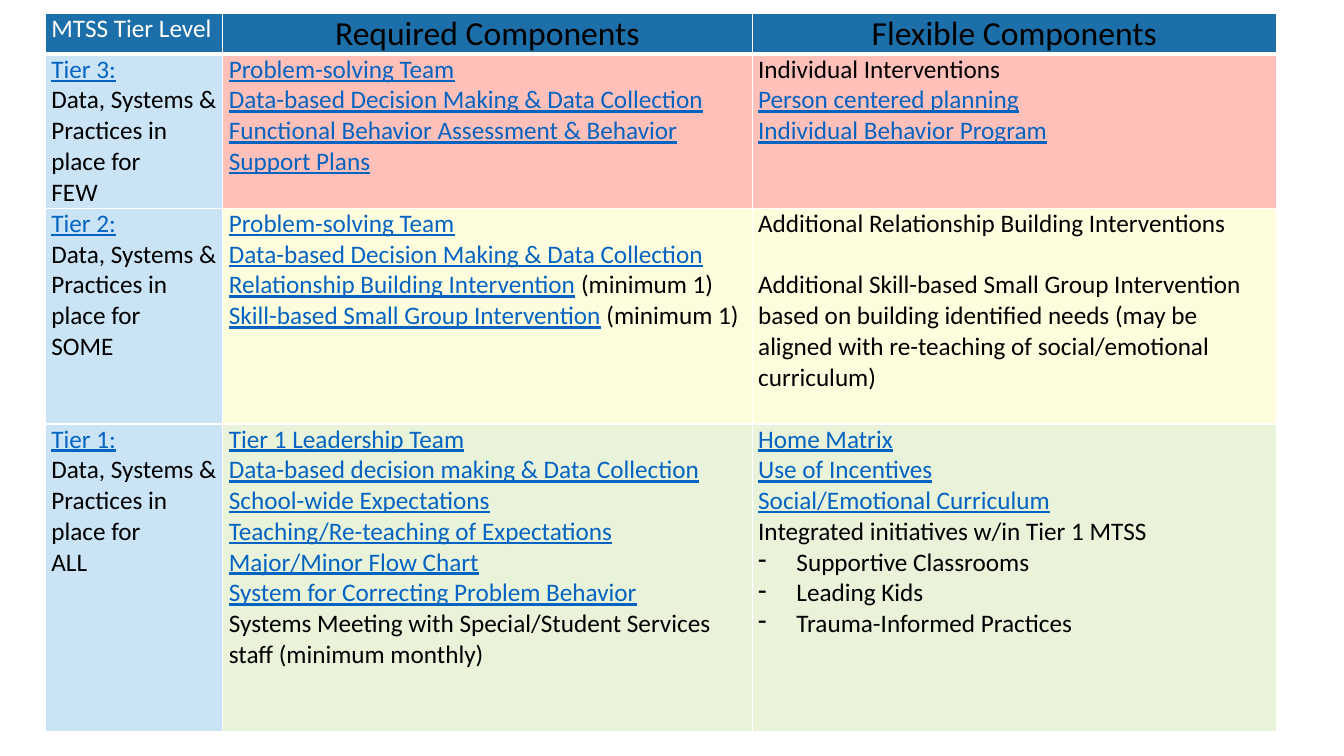
from dataclasses import dataclass

from lxml.etree import SubElement
from pptx import Presentation
from pptx.dml.color import RGBColor as Rgb
from pptx.enum.text import MSO_ANCHOR as Anchor, PP_ALIGN as Align
from pptx.oxml.ns import qn
from pptx.util import Pt


@dataclass(frozen=True)
class Theme:
    """Colours, font and type sizes of the slide."""
    font: str = "Calibri"
    body_size: int = 18
    heading_size: int = 24
    gap: int = 22
    ink: str = "000000"
    link: str = "0563C1"
    white: str = "FFFFFF"
    header: str = "1D6FA9"
    level: str = "CAE4F6"
    few: str = "FFC0B9"
    some: str = "FDFDDE"
    all: str = "E8F3DA"


@dataclass(frozen=True)
class Line:
    """One paragraph: linked words, then plain words."""
    link: str = ""
    plain: str = ""
    dash: bool = False
    gap_before: bool = False


@dataclass(frozen=True)
class Tier:
    """One table row with its level, audience and components."""
    level: str
    audience: str
    fill: str
    height: int
    required: tuple
    flexible: tuple


THEME = Theme()
PX = 9144
SLIDE_SIZE = (1333, 750)
TABLE_BOX = (45, 13, 1221, 712)
COLUMN_WIDTHS = (176, 525, 520)
HEADER_HEIGHT = 40
CELL_INSET = 6
DASH_INDENT = 38

HEADINGS = (
    ("MTSS Tier Level", THEME.body_size, THEME.white, Align.LEFT),
    ("Required Components", THEME.heading_size, THEME.ink, Align.CENTER),
    ("Flexible Components", THEME.heading_size, THEME.ink, Align.CENTER),
)

TIERS = (
    Tier(
        "Tier 3:", "FEW", THEME.few, 153,
        (
            Line("Problem-solving Team"),
            Line("Data-based Decision Making & Data Collection"),
            Line("Functional Behavior Assessment & Behavior Support Plans"),
        ),
        (
            Line(plain="Individual Interventions"),
            Line("Person centered planning"),
            Line("Individual Behavior Program"),
        ),
    ),
    Tier(
        "Tier 2:", "SOME", THEME.some, 214,
        (
            Line("Problem-solving Team"),
            Line("Data-based Decision Making & Data Collection"),
            Line("Relationship Building Intervention", " (minimum 1)"),
            Line("Skill-based Small Group Intervention", " (minimum 1)"),
        ),
        (
            Line(plain="Additional Relationship Building Interventions"),
            Line(plain="Additional Skill-based Small Group Intervention based on "
                       "building identified needs (may be aligned with re-teaching "
                       "of social/emotional curriculum)", gap_before=True),
        ),
    ),
    Tier(
        "Tier 1:", "ALL", THEME.all, 305,
        (
            Line("Tier 1 Leadership Team"),
            Line("Data-based decision making & Data Collection"),
            Line("School-wide Expectations"),
            Line("Teaching/Re-teaching of Expectations"),
            Line("Major/Minor Flow Chart"),
            Line("System for Correcting Problem Behavior"),
            Line(plain="Systems Meeting with Special/Student Services staff "
                       "(minimum monthly)"),
        ),
        (
            Line("Home Matrix"),
            Line("Use of Incentives"),
            Line("Social/Emotional Curriculum"),
            Line(plain="Integrated initiatives w/in Tier 1 MTSS"),
            Line(plain="Supportive Classrooms", dash=True),
            Line(plain="Leading Kids", dash=True),
            Line(plain="Trauma-Informed Practices", dash=True),
        ),
    ),
)


def add_run(paragraph, words, size, color, underline=False):
    """Add one styled run to a paragraph."""
    run = paragraph.add_run()
    run.text = words
    font = run.font
    font.name, font.size, font.bold = THEME.font, Pt(size), False
    font.underline = underline
    font.color.rgb = Rgb.from_string(color)


def add_dash(paragraph):
    """Give a paragraph a hanging dash bullet."""
    properties = paragraph._p.get_or_add_pPr()
    properties.set("marL", str(DASH_INDENT * PX))
    properties.set("indent", str(-DASH_INDENT * PX))
    SubElement(properties, qn("a:buChar"), char="-")


def style_cell(cell, fill, bottom_width=1):
    """Set the insets, white borders and fill of a cell."""
    cell.margin_left = cell.margin_right = CELL_INSET * PX
    cell.margin_top = cell.margin_bottom = 0
    cell.vertical_anchor = Anchor.TOP
    properties = cell._tc.get_or_add_tcPr()
    for side, width in (("L", 1), ("R", 1), ("T", 1), ("B", bottom_width)):
        border = SubElement(properties, qn(f"a:ln{side}"), w=str(Pt(width)))
        paint = SubElement(border, qn("a:solidFill"))
        SubElement(paint, qn("a:srgbClr"), val=THEME.white)
    cell.fill.solid()
    cell.fill.fore_color.rgb = Rgb.from_string(fill)


def fill_header(cells):
    """Write the column headings."""
    for cell, (words, size, color, alignment) in zip(cells, HEADINGS):
        style_cell(cell, THEME.header, bottom_width=3)
        paragraph = cell.text_frame.paragraphs[0]
        paragraph.alignment = alignment
        add_run(paragraph, words, size, color)


def fill_component_cell(cell, fill, lines):
    """Write one body cell, a paragraph for each line."""
    style_cell(cell, fill)
    frame = cell.text_frame
    for index, line in enumerate(lines):
        paragraph = frame.add_paragraph() if index else frame.paragraphs[0]
        if line.gap_before:
            paragraph.space_before = Pt(THEME.gap)
        if line.dash:
            add_dash(paragraph)
        if line.link:
            add_run(paragraph, line.link, THEME.body_size, THEME.link, True)
        if line.plain:
            add_run(paragraph, line.plain, THEME.body_size, THEME.ink)


def fill_tier(cells, tier):
    """Write the three cells of one tier."""
    level = (
        Line(tier.level),
        Line(plain="Data, Systems & Practices in place for"),
        Line(plain=tier.audience),
    )
    fills = (THEME.level, tier.fill, tier.fill)
    for cell, fill, lines in zip(cells, fills, (level, tier.required, tier.flexible)):
        fill_component_cell(cell, fill, lines)


def add_tier_table(slide, box):
    """Place the table of tiers in the given box."""
    frame = slide.shapes.add_table(
        len(TIERS) + 1, len(HEADINGS), *(length * PX for length in box))
    table = frame.table
    table.first_row = table.horz_banding = False
    for column, width in zip(table.columns, COLUMN_WIDTHS):
        column.width = width * PX
    heights = (HEADER_HEIGHT, *(tier.height for tier in TIERS))
    for row, height in zip(table.rows, heights):
        row.height = height * PX
    header, *bodies = table.rows
    fill_header(header.cells)
    for row, tier in zip(bodies, TIERS):
        fill_tier(row.cells, tier)


def main():
    """Build and save the slide."""
    deck = Presentation()
    deck.slide_width, deck.slide_height = (length * PX for length in SLIDE_SIZE)
    slide = deck.slides.add_slide(deck.slide_layouts[6])
    add_tier_table(slide, TABLE_BOX)
    deck.save("out.pptx")


if __name__ == "__main__":
    main()
